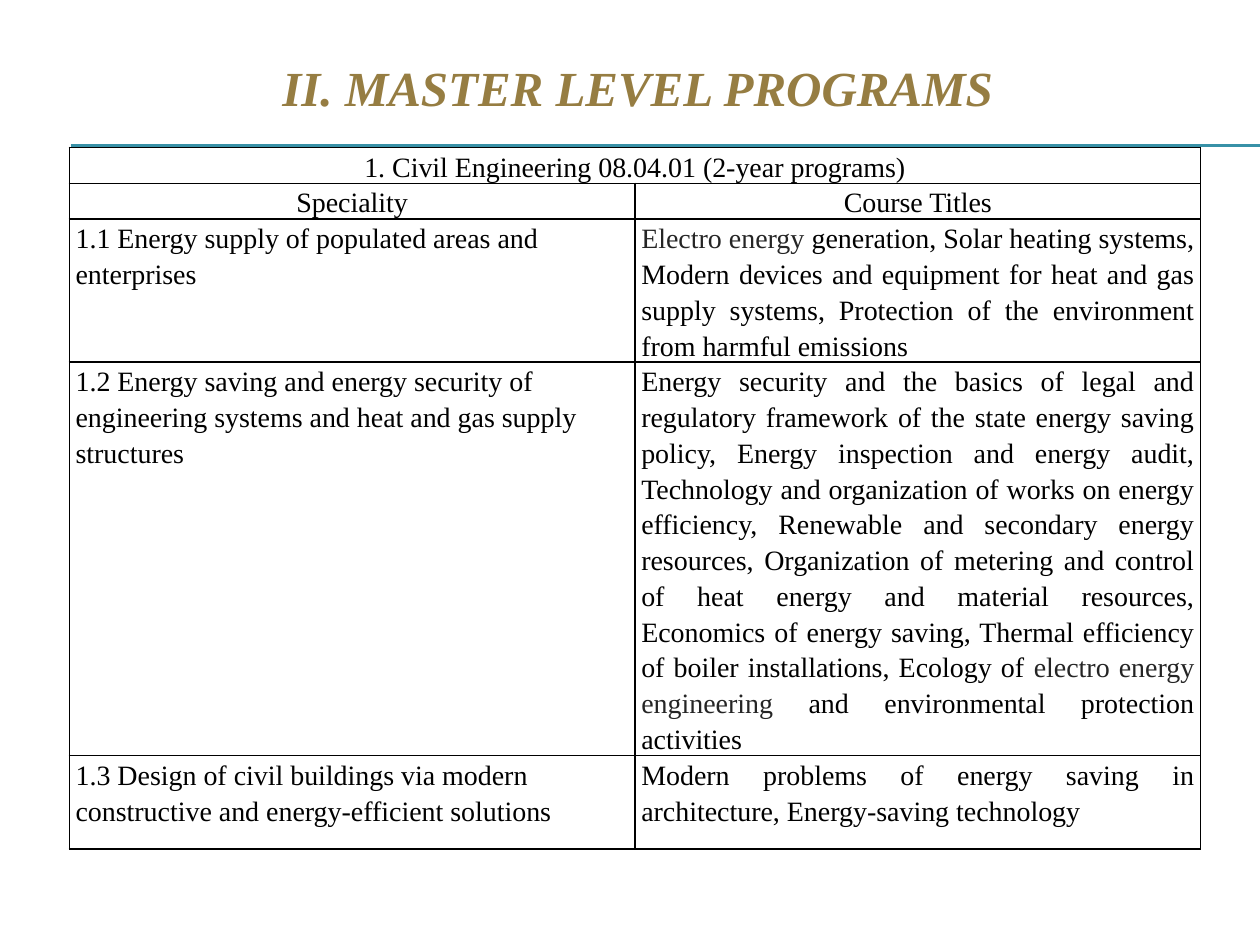
from typing import NamedTuple

from lxml.etree import SubElement
from pptx import Presentation
from pptx.dml.color import RGBColor
from pptx.enum.shapes import MSO_CONNECTOR
from pptx.enum.text import MSO_ANCHOR, MSO_AUTO_SIZE, PP_ALIGN
from pptx.oxml.ns import qn
from pptx.util import Inches, Pt

BLACK = RGBColor(0x00, 0x00, 0x00)
GREY = RGBColor(0x25, 0x25, 0x25)
GOLD = RGBColor(0x96, 0x7D, 0x42)
TEAL = RGBColor(0x38, 0x91, 0xA7)
FACE = "Times New Roman"


class Run(NamedTuple):
    text: str
    color: RGBColor = BLACK


class Row(NamedTuple):
    height: float
    left: list[list[Run]]
    right: list[list[Run]]
    head: bool = False


ROWS = [
    Row(0.19, [[Run("1. Civil Engineering 08.04.01 (2-year programs)")]], [], True),
    Row(0.19, [[Run("Speciality")]], [[Run("Course Titles")]], True),
    Row(0.93,
        [[Run("1.1 Energy supply of populated areas and enterprises")]],
        [[Run("Electro energy", GREY),
          Run(" generation, Solar heating systems, Modern devices and equipment "
              "for heat and gas supply systems, Protection of the environment "
              "from harmful emissions")]]),
    Row(2.41,
        [[Run("1.2 Energy saving and energy security of engineering systems "
              "and heat and gas supply structures")]],
        [[Run("Energy security and the basics of legal and regulatory framework "
              "of the state energy saving policy, Energy inspection and energy "
              "audit, Technology and organization of works on energy efficiency, "
              "Renewable and secondary energy resources, Organization of metering "
              "and control of heat energy and material resources, Economics of "
              "energy saving, Thermal efficiency of boiler installations, "
              "Ecology of "),
          Run("electro energy engineering", GREY),
          Run(" and environmental protection activities")]]),
    Row(0.74,
        [[Run("1.3 Design of civil buildings via modern")],
         [Run("constructive and energy-efficient solutions")]],
        [[Run("Modern problems of energy saving in architecture, "
              "Energy-saving technology")]]),
]


def assign(item, form: dict) -> None:
    for name, value in form.items():
        setattr(item, name, value)


def add_rule(slide, top: float) -> None:
    rule = slide.shapes.add_connector(
        MSO_CONNECTOR.STRAIGHT, Inches(0.56), Inches(top), Inches(10), Inches(top))
    rule.line.color.rgb = TEAL
    rule.line.width = Pt(0.75)
    SubElement(rule._element.spPr, qn("a:effectLst"))


def add_title(slide, text: str) -> None:
    title = slide.shapes.title
    assign(title, {"left": Inches(0.31), "top": Inches(0.23),
                   "width": Inches(9.5), "height": Inches(0.92)})
    frame = title.text_frame
    frame.text = text
    assign(frame, {"vertical_anchor": MSO_ANCHOR.MIDDLE, "word_wrap": True,
                   "auto_size": MSO_AUTO_SIZE.NONE})
    para = frame.paragraphs[0]
    para.alignment = PP_ALIGN.CENTER
    font = para.runs[0].font
    assign(font, {"name": FACE, "size": Pt(28), "bold": True, "italic": True})
    font.color.rgb = GOLD


def add_borders(cell) -> None:
    props = cell._tc.get_or_add_tcPr()
    for at, side in enumerate(("lnL", "lnR", "lnT", "lnB")):
        line = props.makeelement(qn(f"a:{side}"), {"w": str(Pt(1))})
        fill = SubElement(line, qn("a:solidFill"))
        SubElement(fill, qn("a:srgbClr"), val=str(BLACK))
        props.insert(at, line)


def fill_cell(cell, paras: list[list[Run]], align: PP_ALIGN) -> None:
    assign(cell, {"margin_left": Inches(0.05), "margin_right": Inches(0.05),
                  "margin_top": 0, "margin_bottom": 0})
    cell.fill.background()
    add_borders(cell)
    frame = cell.text_frame
    for at, runs in enumerate(paras):
        para = frame.add_paragraph() if at else frame.paragraphs[0]
        assign(para, {"alignment": align, "line_spacing": 1.15})
        for run in runs:
            part = para.add_run()
            part.text = run.text
            assign(part.font, {"name": FACE, "size": Pt(16), "bold": False})
            part.font.color.rgb = run.color


def add_grid(slide, rows: list[Row]) -> None:
    high = sum(row.height for row in rows)
    table = slide.shapes.add_table(
        len(rows), 2, Inches(0.55), Inches(1.17), Inches(8.98), Inches(high)).table
    assign(table, {"first_row": False, "horz_banding": False})
    table.cell(0, 0).merge(table.cell(0, 1))
    for at, row in enumerate(rows):
        table.rows[at].height = Inches(row.height)
        left, right = ((PP_ALIGN.CENTER, PP_ALIGN.CENTER) if row.head
                       else (PP_ALIGN.LEFT, PP_ALIGN.JUSTIFY))
        fill_cell(table.cell(at, 0), row.left, left)
        fill_cell(table.cell(at, 1), row.right, right)


def main() -> None:
    deck = Presentation()
    assign(deck, {"slide_width": Inches(10), "slide_height": Inches(7.5)})
    slide = deck.slides.add_slide(deck.slide_layouts[5])
    for top in (1.15, 1.16):
        add_rule(slide, top)
    add_grid(slide, ROWS)
    add_title(slide, "II. MASTER LEVEL PROGRAMS")
    deck.save("out.pptx")


if __name__ == "__main__":
    main()
